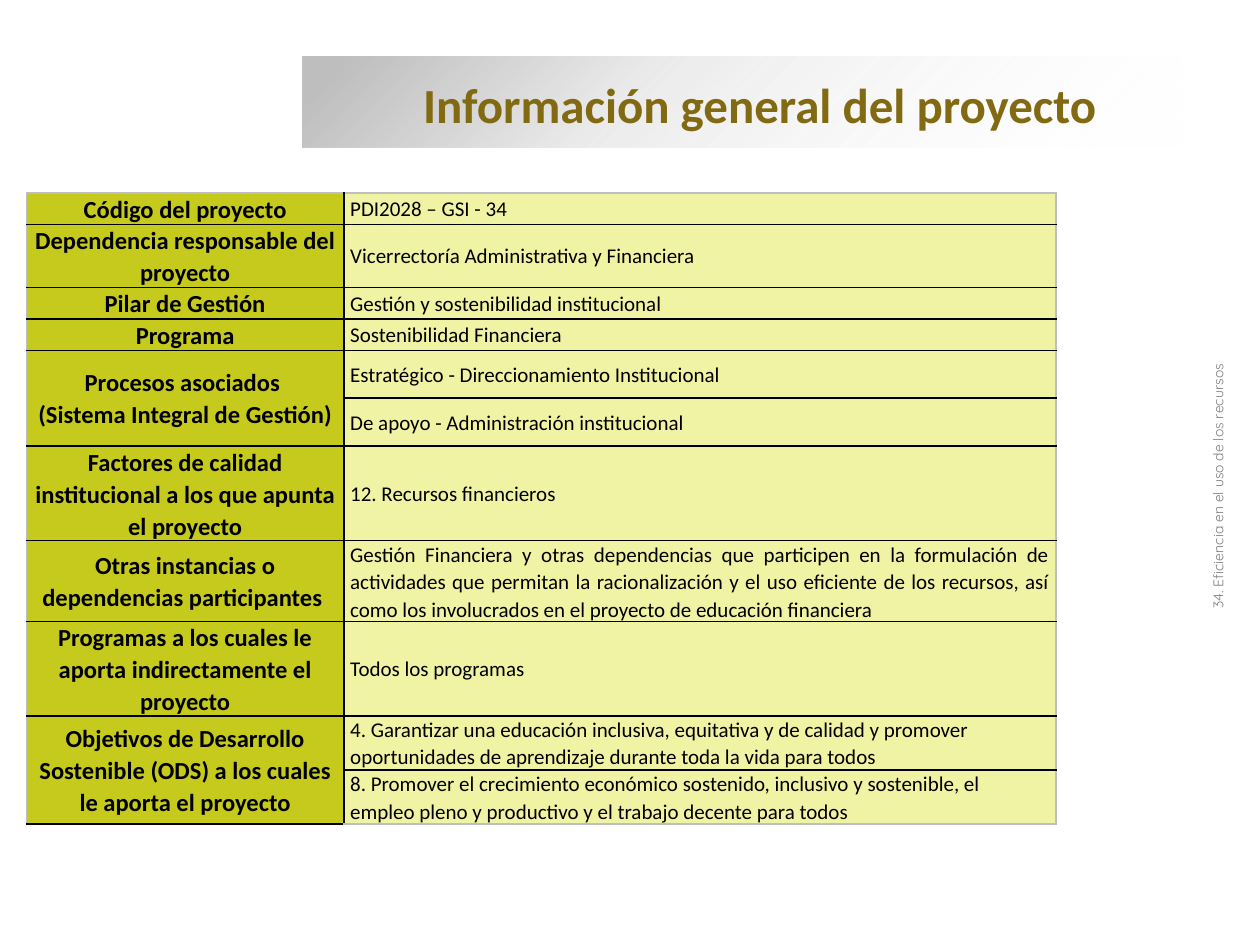
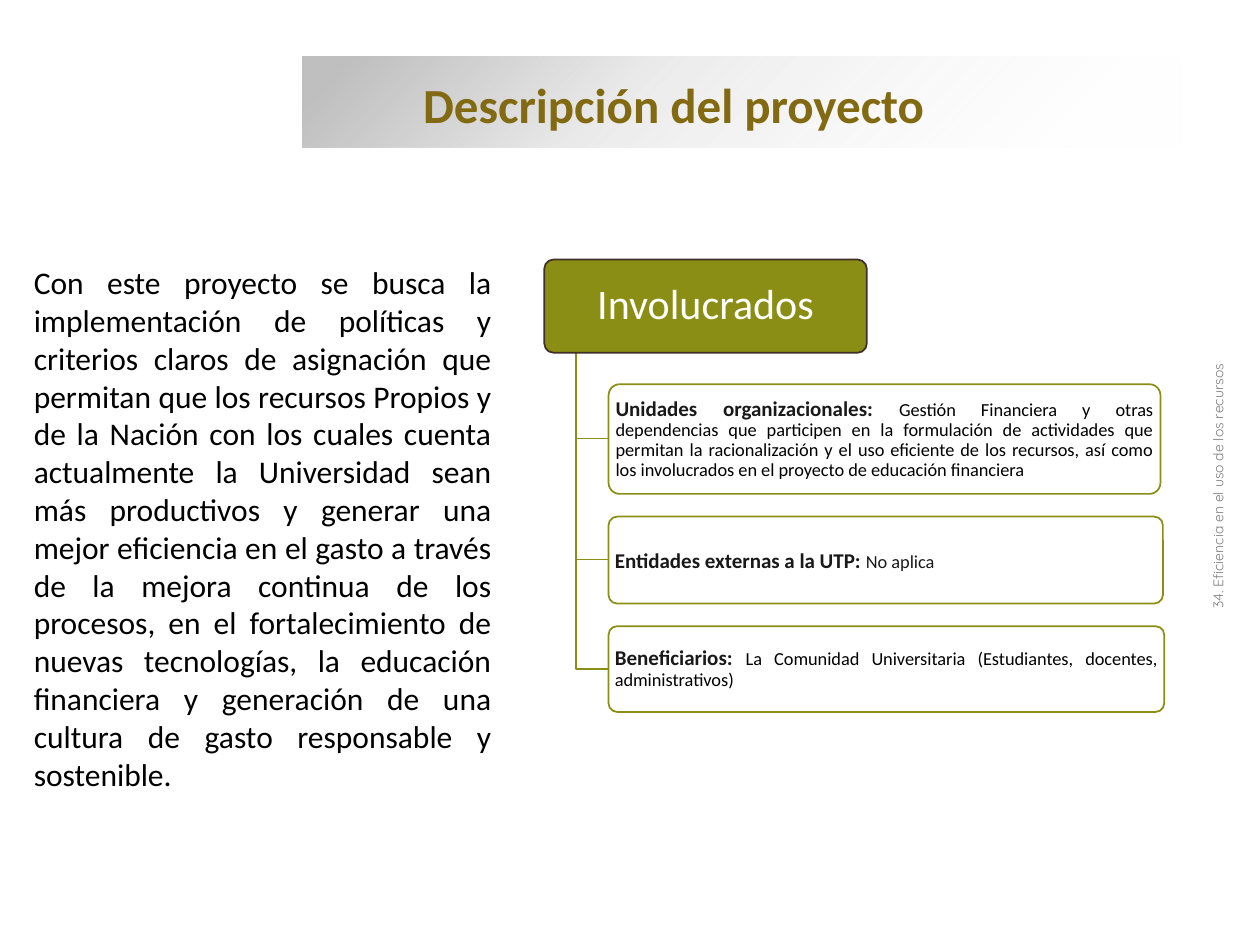
from lxml import etree
from pptx import Presentation
from pptx import util as u
from pptx.dml.color import RGBColor
from pptx.enum import shapes, text
from pptx.oxml import parse_xml

NS = 'xmlns:a="http://schemas.openxmlformats.org/drawingml/2006/main"'
GOLD, LIME, PALE, OLIVE = "826A12", "C6CA1C", "F0F2A4", "8B8E14"
BROWN, INK, BLACK, GRAY, SILVER, WHITE = "3F3029", "191919", "000000", "808080", "BFBFBF", "FFFFFF"
LEFT, CENTER, JUSTIFY = text.PP_ALIGN.LEFT, text.PP_ALIGN.CENTER, text.PP_ALIGN.JUSTIFY


def rgb(code):
    return RGBColor.from_string(code)


def write(frame, words, size=12, color=BLACK, bold=False, font="Calibri", align=LEFT, spacing=1.0):
    frame.word_wrap = True
    paragraph = frame.paragraphs[0]
    paragraph.alignment = align
    paragraph.line_spacing = spacing
    for number, line in enumerate(words.split("\n")):
        if number:
            paragraph.add_line_break()
        run = paragraph.add_run()
        run.text = line
        run.font.size = u.Pt(size)
        run.font.color.rgb = rgb(color)
        run.font.bold = bold
        run.font.name = font


deck = Presentation()
deck.slide_width, deck.slide_height = u.Inches(10), u.Inches(7.5)
col, row = deck.slide_width // 1000, deck.slide_height // 750

pages = []
for title in ["Información general del proyecto", "Descripción del proyecto"]:
    page = deck.slides.add_slide(deck.slide_layouts[6])
    pages.append(page)

    band = page.shapes.add_shape(shapes.MSO_SHAPE.RECTANGLE, 240 * col, 45 * row, 698 * col, 72 * row)
    band.shadow.inherit = False
    band.line.fill.background()
    band.fill.gradient()
    band.fill.gradient_angle = 315
    stops = band.fill._fill._gradFill.gsLst
    for stop in list(stops):
        stops.remove(stop)
    for position, shade, opacity in [(5, SILVER, 100), (37, SILVER, 31), (100, WHITE, 0)]:
        stops.append(parse_xml(
            f'<a:gs {NS} pos="{position * 1000}"><a:srgbClr val="{shade}">'
            f'<a:alpha val="{opacity * 1000}"/></a:srgbClr></a:gs>'))

    heading = page.shapes.add_textbox(326 * col, 54 * row, 620 * col, 57 * row).text_frame
    heading.vertical_anchor = text.MSO_ANCHOR.MIDDLE
    write(heading, title, size=28, color=GOLD, bold=True)

    side_note = page.shapes.add_textbox(725 * col, 374 * row, 484 * col, 24 * row)
    side_note.rotation = 270
    write(side_note.text_frame, "34. Eficiencia en el uso de los recursos",
          size=8, color=GRAY, font="Quicksand", align=CENTER)

general, description = pages

participants = ("Gestión Financiera y otras dependencias que participen en la formulación de actividades "
                "que permitan la racionalización y el uso eficiente de los recursos, así como los "
                "involucrados en el proyecto de educación financiera")
facts = [
    ("Código del proyecto", "PDI2028 – GSI - 34", 25),
    ("Dependencia responsable del proyecto", "Vicerrectoría Administrativa y Financiera", 50),
    ("Pilar de Gestión", "Gestión y sostenibilidad institucional", 25),
    ("Programa", "Sostenibilidad Financiera", 25),
    ("Procesos asociados \n(Sistema Integral de Gestión)", "Estratégico - Direccionamiento Institucional", 38),
    ("", "De apoyo - Administración institucional", 38),
    ("Factores de calidad institucional a los que apunta el proyecto", "12. Recursos financieros", 75),
    ("Otras instancias o dependencias participantes ", participants, 64),
    ("Programas a los cuales le aporta indirectamente el proyecto", "Todos los programas", 75),
    ("Objetivos de Desarrollo Sostenible (ODS) a los cuales le aporta el proyecto",
     "4. Garantizar una educación inclusiva, equitativa y de calidad y promover oportunidades de "
     "aprendizaje durante toda la vida para todos", 43),
    ("", "8. Promover el crecimiento económico sostenido, inclusivo y sostenible, el empleo pleno y "
         "productivo y el trabajo decente para todos", 43),
]
last = len(facts) - 1
sheet = general.shapes.add_table(len(facts), 2, 21 * col, 153 * row, 817 * col, 501 * row).table
sheet.first_row = sheet.horz_banding = False
sheet.columns[0].width, sheet.columns[1].width = 252 * col, 565 * col

for i, (label, value, height) in enumerate(facts):
    sheet.rows[i].height = height * row
    if not label:
        sheet.cell(i - 1, 0).merge(sheet.cell(i, 0))
    for j, words in enumerate((label, value)):
        cell = sheet.cell(i, j)
        cell.vertical_anchor = text.MSO_ANCHOR.MIDDLE
        cell.margin_left = cell.margin_right = (4 + j) * col
        cell.margin_top = cell.margin_bottom = 0
        edges = {"lnL": j == 0, "lnR": j == 1, "lnT": i == 0, "lnB": i == last}
        for side, outer in edges.items():
            border = etree.fromstring(
                f'<a:{side} {NS} w="12700"><a:solidFill>'
                f'<a:srgbClr val="{SILVER if outer else BLACK}"/></a:solidFill></a:{side}>')
            cell._tc.get_or_add_tcPr().append(border)
        cell.fill.solid()
        cell.fill.fore_color.rgb = rgb((LIME, PALE)[j])
        if words:
            align = CENTER if j == 0 else JUSTIFY if words == participants else LEFT
            write(cell.text_frame, words, size=(14, 12)[j], bold=j == 0, align=align, spacing=1.07)

summary = description.shapes.add_textbox(17 * col, 204 * row, 383 * col, 434 * row).text_frame
write(summary, "Con este proyecto se busca la implementación de políticas y criterios claros de asignación "
      "que permitan que los recursos Propios y de la Nación con los cuales cuenta actualmente la "
      "Universidad sean más productivos y generar una mejor eficiencia en el gasto a través de la mejora "
      "continua de los procesos, en el fortalecimiento de nuevas tecnologías, la educación financiera y "
      "generación de una cultura de gasto responsable y sostenible.", size=18, align=JUSTIFY)

trunk, branch, root_bottom = 457, 483, 280
groups = [
    ("Unidades organizacionales: ", participants, BLACK, 0.9, 305, 438, 87),
    ("Entidades externas a la UTP: ", "No aplica", INK, 1.0, 410, 440, 69),
    ("Beneficiarios: ", "La Comunidad Universitaria (Estudiantes, docentes, administrativos)",
     BLACK, 0.9, 497, 441, 68),
]
cards = [(432, 206, 256, 74, OLIVE, BROWN)]
for name, members, ink, spacing, top, width, height in groups:
    middle = top + height // 2
    elbow = description.shapes.build_freeform(trunk * col, root_bottom * row)
    elbow.add_line_segments([(trunk * col, middle * row), (branch * col, middle * row)], close=False)
    link = elbow.convert_to_shape()
    link.shadow.inherit = False
    link.fill.background()
    link.line.color.rgb = rgb(OLIVE)
    link.line.width = u.Pt(1)
    cards.append((branch, top, width, height, WHITE, OLIVE))

frames = []
for left, top, width, height, inside, outline in cards:
    card = description.shapes.add_shape(
        shapes.MSO_SHAPE.ROUNDED_RECTANGLE, left * col, top * row, width * col, height * row)
    card.adjustments[0] = 0.1
    card.shadow.inherit = False
    card.fill.solid()
    card.fill.fore_color.rgb = rgb(inside)
    card.line.color.rgb = rgb(outline)
    card.line.width = u.Pt(1)
    frame = card.text_frame
    frame.vertical_anchor = text.MSO_ANCHOR.MIDDLE
    frame.margin_left = frame.margin_right = 3 * col
    frame.margin_top = frame.margin_bottom = 2 * row
    frames.append(frame)

write(frames[0], "Involucrados", size=24, color=WHITE, align=CENTER, spacing=0.9)
for frame, (name, members, ink, spacing, *_) in zip(frames[1:], groups):
    write(frame, name, color=INK, bold=True, align=JUSTIFY, spacing=spacing)
    write(frame, members, size=10.5, color=ink, align=JUSTIFY, spacing=spacing)

deck.save("out.pptx")
